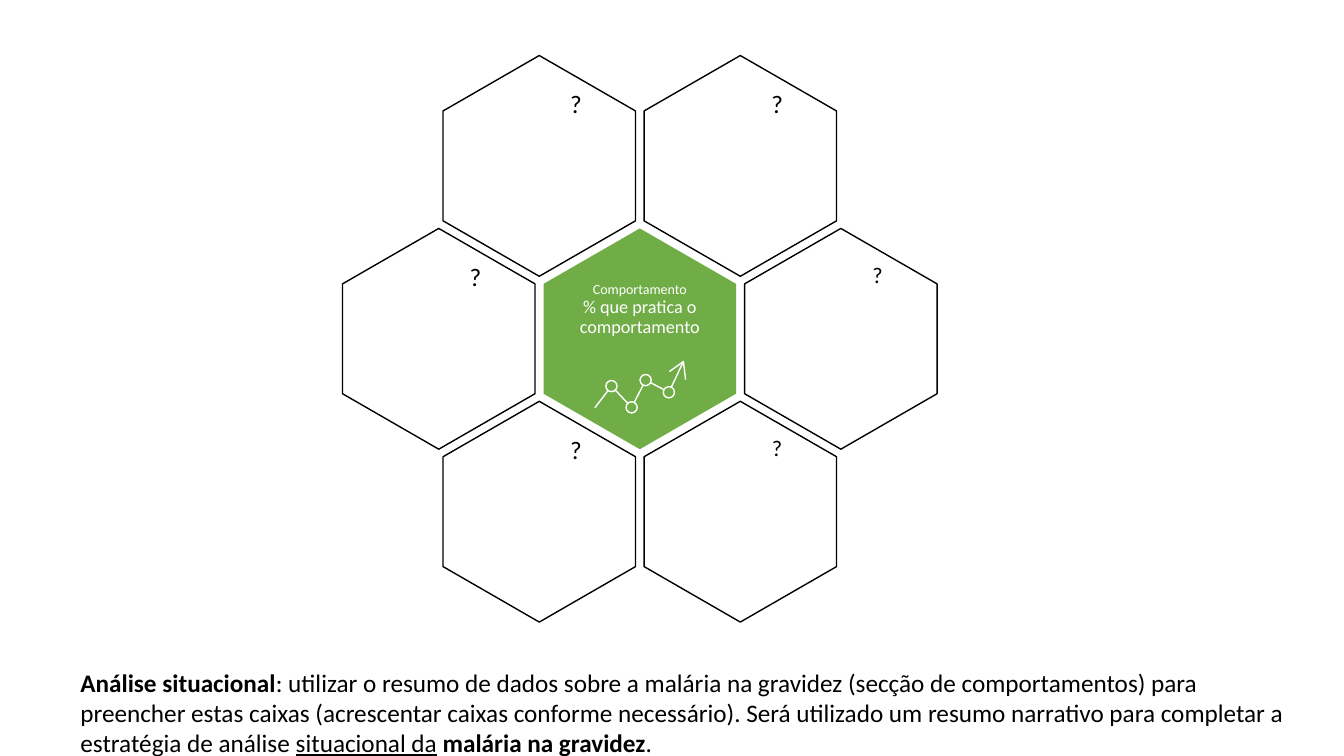
import math

import pptx
import pptx.dml.color
import pptx.enum.shapes
import pptx.enum.text
import pptx.util
from pptx.util import Pt

SHAPE = pptx.enum.shapes.MSO_SHAPE
FONT = "Calibri"
BLACK, WHITE, GREEN = "000000", "FFFFFF", "70AD47"
HEX_LENGTH, HEX_WIDTH = 157.7, 137.5
COLUMN_PITCH, ROW_PITCH = 143.6, 123.5
NODE_RADIUS = 4


def rgb(value):
    """Turn a hex string into a colour."""
    return pptx.dml.color.RGBColor.from_string(value)


def paint(sp, fill=None, line=None):
    """Set the fill and the line of a shape, without shadow."""
    sp.shadow.inherit = False
    if fill:
        sp.fill.solid()
        sp.fill.fore_color.rgb = rgb(fill)
    else:
        sp.fill.background()
    if line:
        sp.line.color.rgb = rgb(line)
        sp.line.width = Pt(1)
    else:
        sp.line.fill.background()


def add_text(s, box, margins):
    """Add a wrapping text box and return its text frame."""
    tf = s.shapes.add_textbox(*map(Pt, box)).text_frame
    tf.word_wrap = True
    tf.vertical_anchor = pptx.enum.text.MSO_ANCHOR.TOP
    tf.margin_left, tf.margin_top, tf.margin_right, tf.margin_bottom = map(Pt, margins)
    return tf


def style(p, size, color):
    """Set the font of a paragraph."""
    p.font.name = FONT
    p.font.size = Pt(size)
    p.font.color.rgb = rgb(color)


def add_label(s, box, lines, color):
    """Add centred lines, each given as words and size."""
    tf = add_text(s, box, (52.6, 0, 0, 0))
    for i, (words, size) in enumerate(lines):
        p = tf.add_paragraph() if i else tf.paragraphs[0]
        p.text = words
        p.alignment = pptx.enum.text.PP_ALIGN.CENTER
        p.line_spacing = 0.9
        style(p, size, color)


def add_hexagon(s, cx, cy, fill=None, line=None):
    """Add a hexagon standing on a corner around a centre."""
    sp = s.shapes.add_shape(
        SHAPE.HEXAGON, Pt(cx - HEX_LENGTH / 2), Pt(cy - HEX_WIDTH / 2),
        Pt(HEX_LENGTH), Pt(HEX_WIDTH))
    sp.adjustments[0] = 0.288
    sp.rotation = 90
    paint(sp, fill, line)


def add_question(s, cx, cy, size):
    """Add an empty hexagon with a question mark."""
    add_hexagon(s, cx, cy, line=BLACK)
    add_label(s, (cx - 45.7, cy - 53, 91.4, 105), [("?", size)], BLACK)


def add_trend_icon(s, cx, cy):
    """Add a rising line of ringed nodes that ends in an open arrowhead."""
    trend = [(-31.3, 49.3), (-19.4, 33.8), (-5, 49), (5, 29.5), (21.6, 38.2), (32, 16.2)]
    trend = [(cx + x, cy + y) for x, y in trend]
    nodes, tip = trend[1:-1], trend[-1]
    head = [(tip[0] + 1.5, tip[1] + 13), tip, (tip[0] - 10, tip[1] + 7.2)]
    head = [(Pt(x), Pt(y)) for x, y in head]
    builder = s.shapes.build_freeform(*head[0])
    builder.add_line_segments(head[1:], close=False)
    paint(builder.convert_to_shape(), line=WHITE)

    for a, b in zip(trend, trend[1:]):
        length = math.dist(a, b)
        ux, uy = (b[0] - a[0]) / length, (b[1] - a[1]) / length
        start = NODE_RADIUS if a in nodes else 0
        end = NODE_RADIUS if b in nodes else 0
        line = s.shapes.add_connector(
            pptx.enum.shapes.MSO_CONNECTOR.STRAIGHT,
            Pt(a[0] + ux * start), Pt(a[1] + uy * start),
            Pt(b[0] - ux * end), Pt(b[1] - uy * end))
        line.line.color.rgb = rgb(WHITE)
        line.line.width = Pt(1)
        sp_pr = line._element.spPr
        sp_pr.append(sp_pr.makeelement(pptx.oxml.ns.qn("a:effectLst"), {}))

    for x, y in nodes:
        sp = s.shapes.add_shape(
            SHAPE.OVAL, Pt(x - NODE_RADIUS), Pt(y - NODE_RADIUS),
            Pt(2 * NODE_RADIUS), Pt(2 * NODE_RADIUS))
        paint(sp, line=WHITE)


def add_honeycomb(s, cx, cy):
    """Add six questions around the behaviour hexagon."""
    questions = [(-0.5, -1, 18), (0.5, -1, 18), (-1, 0, 18),
                 (1, 0, 16), (-0.5, 1, 18), (0.5, 1, 16)]
    for column, row, size in questions:
        add_question(s, cx + column * COLUMN_PITCH, cy + row * ROW_PITCH, size)
    add_hexagon(s, cx, cy, fill=GREEN)
    add_label(s, (cx - 98, cy - 40, 143.3, 105),
              [("Comportamento", 10), ("% que pratica o comportamento", 13)], WHITE)
    add_trend_icon(s, cx - 0.8, cy)


def add_caption(s, box):
    """Add the instruction below the honeycomb."""
    p = add_text(s, box, (7.2, 3.6, 7.2, 3.6)).paragraphs[0]
    style(p, 18, BLACK)
    for words, bold, underline in [
        ("Análise situacional", True, False),
        (": utilizar o resumo de dados sobre a malária na gravidez (secção de "
         "comportamentos) para preencher estas caixas (acrescentar caixas conforme "
         "necessário). Será utilizado um resumo narrativo para completar a "
         "estratégia de análise ", False, False),
        ("situacional da", False, True),
        (" ", False, False),
        ("malária na gravidez", True, False),
        (".", False, False),
    ]:
        r = p.add_run()
        r.text = words
        r.font.bold = bold
        r.font.underline = underline


def main():
    """Build the slide and save it."""
    prs = pptx.Presentation()
    prs.slide_width, prs.slide_height = Pt(960), Pt(540)
    s = prs.slides.add_slide(prs.slide_layouts[6])
    add_caption(s, (50.4, 473, 875.5, 51))
    add_honeycomb(s, 457, 242)
    prs.save("out.pptx")


if __name__ == "__main__":
    main()
